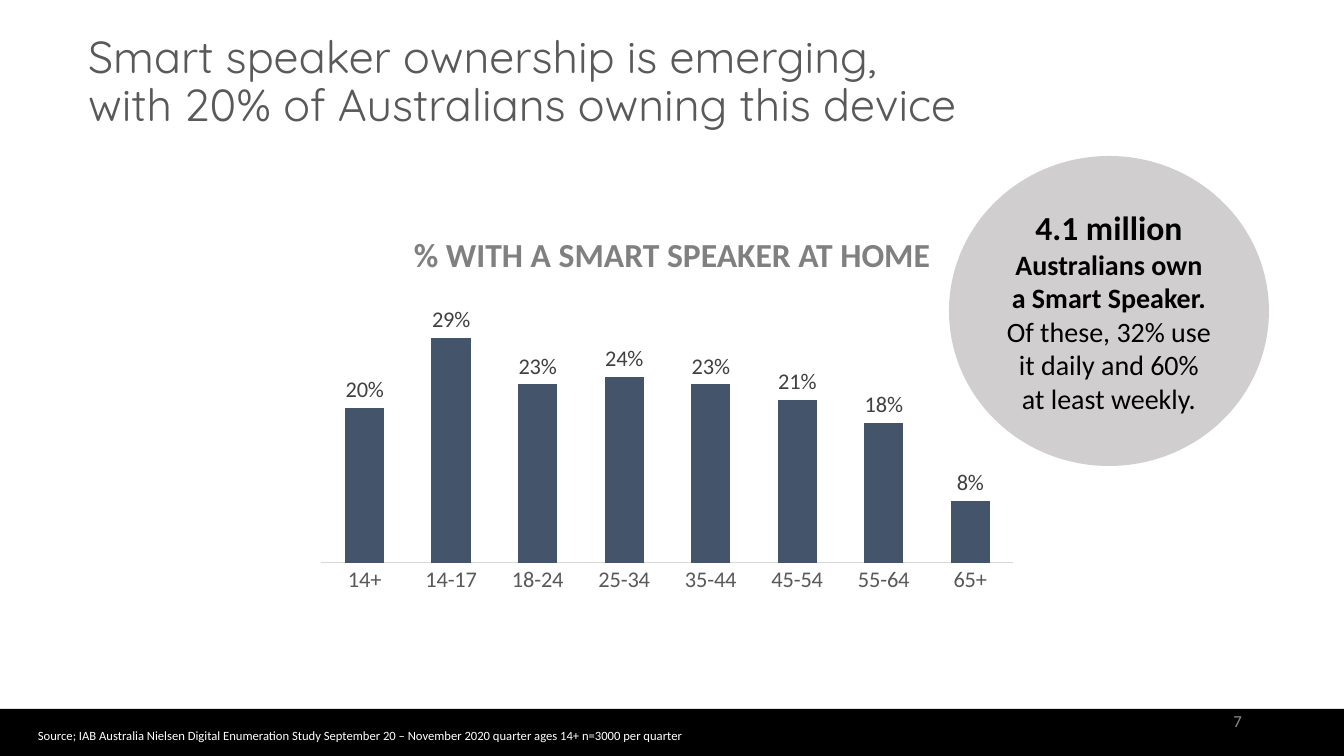
from dataclasses import dataclass
from typing import Any

import pptx
import pptx.chart.data
import pptx.dml.color
import pptx.enum.chart
import pptx.enum.shapes
import pptx.enum.text
import pptx.oxml
import pptx.oxml.ns
import pptx.util

PAGE_WIDTH, PAGE_HEIGHT = 1344, 756
EMU_PER_PX = 12192000 / PAGE_WIDTH
ALIGN = pptx.enum.text.PP_ALIGN
ANCHOR = pptx.enum.text.MSO_ANCHOR
SHAPE = pptx.enum.shapes.MSO_SHAPE

OWNERSHIP = {
    "14+": 0.20, "14-17": 0.29, "18-24": 0.23, "25-34": 0.24,
    "35-44": 0.23, "45-54": 0.21, "55-64": 0.18, "65+": 0.08,
}


@dataclass(frozen=True)
class Area:
    left: int
    top: int
    width: int
    height: int

    def emu(self) -> list[int]:
        return [px(n) for n in (self.left, self.top, self.width, self.height)]


@dataclass(frozen=True)
class Span:
    text: str
    size: int
    color: str
    bold: bool = False
    font: str = "Calibri"


@dataclass(frozen=True)
class TextBox:
    area: Area
    span: Span
    align: Any = ALIGN.LEFT
    anchor: Any = ANCHOR.TOP


TITLE = Span("Smart speaker ownership is emerging,\v"
             "with 20% of Australians owning this device",
             32, "595959", font="Quicksand")
CALLOUT = [
    [Span("4.1 million\v", 24, "000000", True),
     Span("Australians own a Smart Speaker.", 20, "000000", True)],
    [Span("Of these, 32% use it daily and 60% at least weekly.", 20, "000000")],
]
TEXT_BOXES = [
    TextBox(Area(0, 229, PAGE_WIDTH, 50),
            Span("% WITH A SMART SPEAKER AT HOME", 24, "808080", True), ALIGN.CENTER),
    TextBox(Area(28, 723, 793, 25),
            Span("Source; IAB Australia Nielsen Digital Enumeration Study September 20 – "
                 "November 2020 quarter ages 14+ n=3000 per quarter", 9, "FFFFFF")),
    TextBox(Area(950, 701, 302, 40), Span("7", 12, "8C8C8C"), ALIGN.RIGHT, ANCHOR.MIDDLE),
]


def px(length: int) -> int:
    return round(length * EMU_PER_PX)


def rgb(color: str) -> pptx.dml.color.RGBColor:
    return pptx.dml.color.RGBColor.from_string(color)


def apply(target: Any, **values: Any) -> None:
    for name, value in values.items():
        setattr(target, name, value)


def format_font(font: Any, size: int, color: str, bold: bool = False,
                name: str = "Calibri") -> None:
    apply(font, size=pptx.util.Pt(size), bold=bold, name=name)
    font.color.rgb = rgb(color)


def write(frame: Any, paragraphs: list[list[Span]], align: Any, anchor: Any) -> None:
    """Fill a text frame; a vertical tab in a span is a line break."""
    apply(frame, word_wrap=True, vertical_anchor=anchor,
          auto_size=pptx.enum.text.MSO_AUTO_SIZE.NONE)
    for index, spans in enumerate(paragraphs):
        para = frame.add_paragraph() if index else frame.paragraphs[0]
        para.alignment = align
        for span in spans:
            for number, line in enumerate(span.text.split("\v")):
                if number:
                    para.add_line_break()
                if line:
                    run = para.add_run()
                    run.text = line
                    format_font(run.font, span.size, span.color, span.bold, span.font)


def add_plain_shape(page: Any, kind: Any, area: Area, fill: str) -> Any:
    shape = page.shapes.add_shape(kind, *area.emu())
    shape.shadow.inherit = False
    shape.fill.solid()
    shape.fill.fore_color.rgb = rgb(fill)
    shape.line.fill.background()
    return shape


def fix_plot_area(chart: Any, **fractions: float) -> None:
    """Place the inner plot area by fractions of the chart."""
    parts = "".join(f'<c:{tag}Mode val="edge"/>' for tag in "xy")
    parts += "".join(f'<c:{tag} val="{value}"/>' for tag, value in fractions.items())
    layout = pptx.oxml.parse_xml(
        f'<c:layout {pptx.oxml.ns.nsdecls("c")}><c:manualLayout>'
        f'<c:layoutTarget val="inner"/>{parts}</c:manualLayout></c:layout>')
    plot_area = chart.plots[0]._element.getparent()
    for old in plot_area.findall(pptx.oxml.ns.qn("c:layout")):
        plot_area.remove(old)
    plot_area.insert(0, layout)


def add_ownership_chart(page: Any, area: Area) -> None:
    enums = pptx.enum.chart
    data = pptx.chart.data.CategoryChartData(number_format="0%")
    data.categories = list(OWNERSHIP)
    data.add_series("Series 1", list(OWNERSHIP.values()))
    chart = page.shapes.add_chart(
        enums.XL_CHART_TYPE.COLUMN_CLUSTERED, *area.emu(), data).chart
    apply(chart, has_legend=False, has_title=False)
    format_font(chart.font, 10, "000000")

    apply(chart.value_axis, minimum_scale=0, maximum_scale=0.35,
          has_major_gridlines=False, visible=False)
    ages = chart.category_axis
    apply(ages, major_tick_mark=enums.XL_TICK_MARK.NONE, has_major_gridlines=False)
    format_font(ages.tick_labels.font, 16, "595959")
    ages.format.line.width = pptx.util.Pt(0.75)
    ages.format.line.color.rgb = rgb("D9D9D9")

    plot = chart.plots[0]
    apply(plot, gap_width=120, overlap=-27, vary_by_categories=False, has_data_labels=True)
    apply(plot.data_labels, show_value=True, number_format="0%",
          number_format_is_linked=False, position=enums.XL_LABEL_POSITION.OUTSIDE_END)
    format_font(plot.data_labels.font, 16, "404040")
    columns = plot.series[0]
    columns.format.fill.solid()
    columns.format.fill.fore_color.rgb = rgb("44546A")
    fix_plot_area(chart, x=0.02, y=0.03, w=0.96, h=0.85)


def main() -> None:
    deck = pptx.Presentation()
    apply(deck, slide_width=px(PAGE_WIDTH), slide_height=px(PAGE_HEIGHT))
    page = deck.slides.add_slide(deck.slide_layouts[5])

    title = page.shapes.title
    left, top, width, height = Area(78, 37, 1111, 92).emu()
    apply(title, left=left, top=top, width=width, height=height)
    write(title.text_frame, [[TITLE]], ALIGN.LEFT, ANCHOR.MIDDLE)
    title.text_frame.paragraphs[0].line_spacing = 0.9

    add_plain_shape(page, SHAPE.RECTANGLE, Area(0, 709, PAGE_WIDTH, 47), "000000")
    circle = add_plain_shape(page, SHAPE.OVAL, Area(949, 156, 320, 310), "D0CECE")
    write(circle.text_frame, CALLOUT, ALIGN.CENTER, ANCHOR.MIDDLE)
    for item in TEXT_BOXES:
        box = page.shapes.add_textbox(*item.area.emu())
        write(box.text_frame, [[item.span]], item.align, item.anchor)
    add_ownership_chart(page, Area(307, 282, 721, 319))
    deck.save("out.pptx")


if __name__ == "__main__":
    main()
